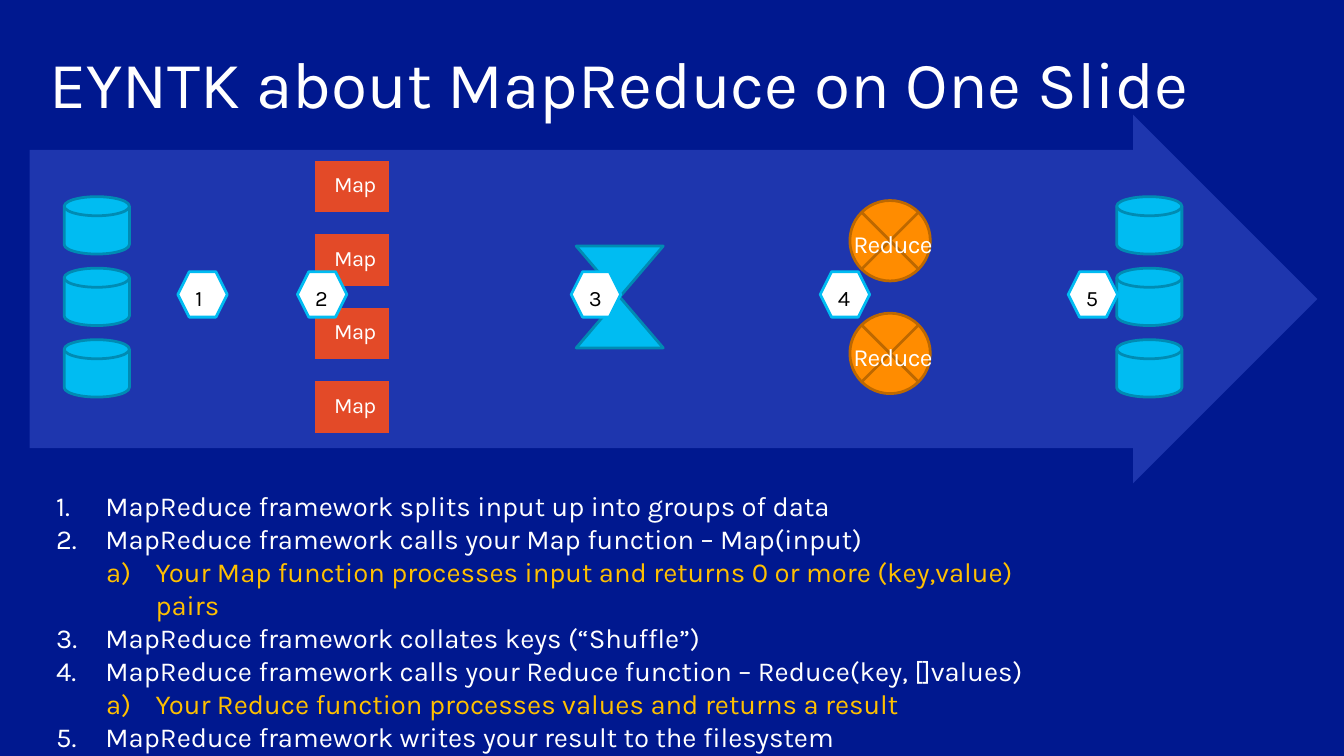
import pptx
import pptx.chart.data
import pptx.dml.color
import pptx.enum.shapes
import pptx.enum.text
import pptx.oxml
import pptx.oxml.ns
import pptx.util

Pt = pptx.util.Pt
KIND = pptx.enum.shapes.MSO_SHAPE
ALIGN = pptx.enum.text.PP_ALIGN
ANCHOR = pptx.enum.text.MSO_ANCHOR
STEPS = [
    (0, "MapReduce framework splits input up into groups of data"),
    (0, "MapReduce framework calls your Map function – Map(input)"),
    (1, "Your Map function processes input and returns 0 or more (key,value) pairs"),
    (0, "MapReduce framework collates keys (“Shuffle”)"),
    (0, "MapReduce framework calls your Reduce function – Reduce(key, []values)"),
    (1, "Your Reduce function processes values and returns a result"),
    (0, "MapReduce framework writes your result to the filesystem"),
]


def paint(target, color):
    """Give a fill or line fill one solid colour."""
    target.solid()
    target.fore_color.rgb = pptx.dml.color.RGBColor.from_string(color)


def write(para, text, size, color, gap=0):
    """Add one styled run, with optional letter spacing in points."""
    run = para.add_run()
    run.text = text
    run.font.size = Pt(size)
    run.font.name = "Karla"
    paint(run.font.fill, color)
    if gap:
        run.font._element.set("spc", str(round(gap * 100)))


def inset(frame, left, top, right, bottom):
    """Set the four margins of a text frame."""
    frame.margin_left, frame.margin_top = Pt(left), Pt(top)
    frame.margin_right, frame.margin_bottom = Pt(right), Pt(bottom)


def draw(shapes, kind, box, fill, edge=None):
    """Add a flat preset shape in the given box."""
    shape = shapes.add_shape(kind, *map(Pt, box))
    shape.shadow.inherit = False
    paint(shape.fill, fill)
    if edge:
        paint(shape.line.fill, edge)
        shape.line.width = Pt(2)
    else:
        shape.line.fill.background()
    return shape


def label(shape, text, size, color, align, anchor, wrap=True):
    """Write a short label inside a shape."""
    frame = shape.text_frame
    inset(frame, 7.2, 7.2, 2.9, 2.9)
    frame.word_wrap = wrap
    frame.vertical_anchor = anchor
    para = frame.paragraphs[0]
    para.alignment = align
    write(para, text, size, color, -0.5)


def head(slide, box):
    """Place the slide title."""
    title = slide.shapes.title
    title.left, title.top, title.width, title.height = map(Pt, box)
    frame = title.text_frame
    inset(frame, 14.4, 3.6, 14.4, 3.6)
    frame.word_wrap = True
    frame.vertical_anchor = ANCHOR.MIDDLE
    para = frame.paragraphs[0]
    para.alignment = ALIGN.LEFT
    write(para, "EYNTK about MapReduce on One Slide", 48, "FFFFFF")


def disks(slide, left, top):
    """Stack three data stores."""
    group = slide.shapes.add_group_shape()
    for row in range(3):
        box = left, top + 52.1 * row, 47.5, 41.8
        draw(group.shapes, KIND.FLOWCHART_MAGNETIC_DISK, box, "00BCF2", "008BB3")


def maps(slide, left, top):
    """Stack four map tasks."""
    group = slide.shapes.add_group_shape()
    for row in range(4):
        box = left, top + 53.5 * row, 54, 37.4
        task = draw(group.shapes, KIND.FLOWCHART_PROCESS, box, "E34A28")
        label(task, "Map", 16, "FFFFFF", ALIGN.CENTER, ANCHOR.TOP)


def folds(slide, left, top):
    """Stack two reduce tasks."""
    group = slide.shapes.add_group_shape()
    for row in range(2):
        box = left, top + 82.1 * row, 58.6, 58.6
        task = draw(group.shapes, KIND.FLOWCHART_SUMMING_JUNCTION, box, "FF8C00", "BD6800")
        label(task, "Reduce", 18, "FFFFFF", ALIGN.CENTER, ANCHOR.MIDDLE, False)


def flow(slide, box):
    """Draw the pipeline arrow with its stages and step numbers."""
    left, top, width, height = box
    arrow = draw(slide.shapes, KIND.RIGHT_ARROW, box, "6C85FF")
    arrow.adjustments[0] = 0.809
    arrow.adjustments[1] = 0.5
    tint = arrow.fill._xPr.find(".//" + pptx.oxml.ns.qn("a:srgbClr"))
    tint.append(pptx.oxml.parse_xml(
        f'<a:alpha {pptx.oxml.ns.nsdecls("a")} val="28000"/>'))
    slide.shapes.title.element.addprevious(arrow.element)
    disks(slide, left + 25.2, top + 59.8)
    maps(slide, left + 208.1, top + 33.8)
    sort = left + 398.2, top + 95.8, 63.4, 74.2
    draw(slide.shapes, KIND.FLOWCHART_COLLATE, sort, "00BCF2", "008BB3")
    folds(slide, left + 597.6, top + 62.6)
    disks(slide, left + 792, top + 59.8)
    for step, shift in enumerate((108, 195.1, 394.6, 576, 756.7), 1):
        spot = left + shift, top + 114.5, 36, 33.1
        badge = draw(slide.shapes, KIND.HEXAGON, spot, "FFFFFF", "00BCF2")
        label(badge, str(step), 16, "000000", ALIGN.LEFT, ANCHOR.MIDDLE)


def notes(slide, box):
    """List the numbered steps with their lettered details."""
    frame = slide.shapes.add_textbox(*map(Pt, box)).text_frame
    frame.word_wrap = True
    for row, (level, text) in enumerate(STEPS):
        para = frame.add_paragraph() if row else frame.paragraphs[0]
        para.level = level
        props = para._p.get_or_add_pPr()
        props.set("marL", str(Pt(36 + 36.5 * level)))
        props.set("indent", str(Pt(-36)))
        style = ("arabicPeriod", "alphaLcParenR")[level]
        props.append(pptx.oxml.parse_xml(
            f'<a:buAutoNum {pptx.oxml.ns.nsdecls("a")} type="{style}"/>'))
        write(para, text, 20, ("FFFFFF", "FFC000")[level])


def main():
    """Build and save the deck."""
    deck = pptx.Presentation()
    deck.slide_width, deck.slide_height = Pt(979.2), Pt(550.8)
    slide = deck.slides.add_slide(deck.slide_layouts[5])
    paint(slide.background.fill, "00188F")
    head(slide, (21.6, 23.8, 936, 72))
    flow(slide, (21.6, 83.5, 938.2, 268.6))
    notes(slide, (33.8, 352.8, 743.8, 177.1))
    deck.save("out.pptx")


if __name__ == "__main__":
    main()
